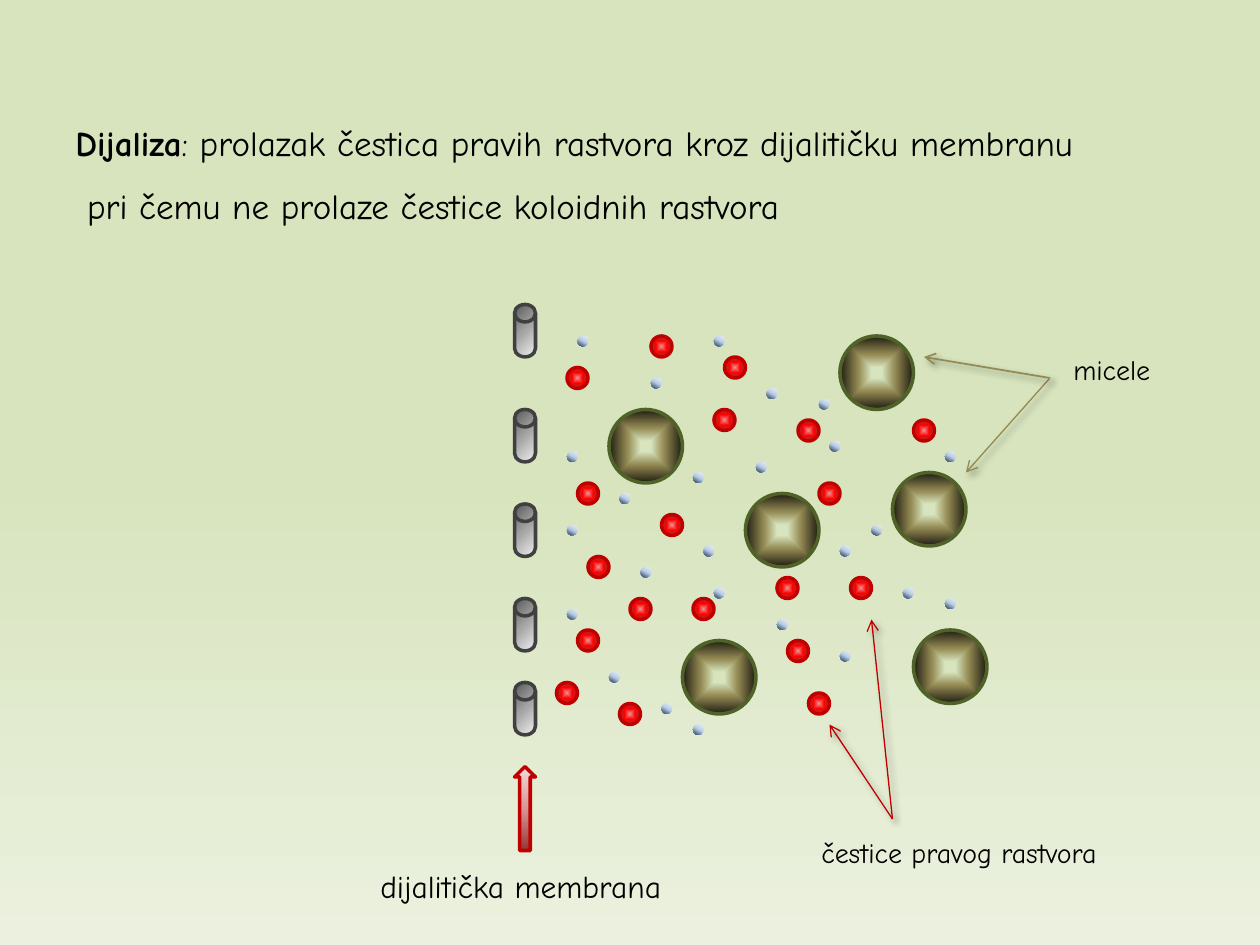
from lxml import etree
from pptx import Presentation
from pptx import util as u
from pptx.dml.color import RGBColor
from pptx.enum import shapes, text
from pptx.oxml import parse_xml
from pptx.oxml.ns import nsdecls, qn

COLORS = {
    "ink": "000000", "steel": "404040", "moss": "4F6228",
    "olive": "948A54", "red": "C00000",
}
GRADIENTS = {
    "sky": [(0, "EBF1DE"), (50, "D7E4BD"), (100, "D7E4BD")],
    "membrane": [(0, "F2F2F2"), (50, "A6A6A6"), (100, "595959")],
    "micelle": [(14, "D7E4BD"), (50, "948A54"), (100, "1E1C11")],
    "particle": [(0, "EB9393"), (50, "FF0000"), (100, "953735")],
    "arrow": [(0, "F2DCDB"), (50, "D99694"), (100, "953735")],
    "solvent": [(14, "DCE6F2"), (50, "B9CDE5"), (100, "254061")],
}
CENTER = (50, 50, 50, 50)
CORNER = (100, 100, 0, 0)

PORES = [29, 39, 48, 57, 65]
MICELLES = [(71, 47), (85, 45), (87, 60), (65, 61), (58, 39), (80, 32)]
PARTICLES = [
    (56, 53), (68, 39), (60, 57), (62, 32), (53, 65), (74, 55), (66, 57),
    (77, 66), (76, 40), (81, 55), (63, 49), (55, 46), (87, 40), (59, 67),
    (69, 34), (78, 46), (75, 61), (54, 35), (55, 60),
]
SOLVENT = [
    (72, 44), (73, 37), (62, 36), (66, 45), (61, 54), (67, 52), (79, 42),
    (78, 38), (80, 52), (86, 56), (54, 50), (54, 43), (55, 32), (68, 32),
    (74, 59), (68, 56), (58, 64), (54, 58), (59, 47), (90, 43), (83, 50),
    (80, 62), (63, 67), (66, 69), (90, 57),
]


def grid(n):
    return u.Inches(n / 12)


def add_run(p, content, size=16, bold=False, color="ink", font="Comic Neue"):
    r = p.add_run()
    r.text = content
    r.font.name = font
    r.font.size = u.Pt(size)
    r.font.bold = bold
    r.font.color.rgb = RGBColor.from_string(COLORS[color])
    return r


class Deck:
    def __init__(self):
        self.prs = Presentation()
        self.prs.slide_width = u.Inches(10)
        self.prs.slide_height = u.Inches(7.5)
        self.s = self.prs.slides.add_slide(self.prs.slide_layouts[6])

    def gradient(self, owner, fill, name, angle=None, path="shape", center=CENTER):
        fill.gradient()
        old = owner._element.find(".//" + qn("a:gradFill"))
        stops = "".join(
            f'<a:gs pos="{pos * 1000}"><a:srgbClr val="{color}"/></a:gs>'
            for pos, color in GRADIENTS[name]
        )
        if angle is None:
            sides = " ".join(f'{k}="{v * 1000}"' for k, v in zip("ltrb", center))
            way = f'<a:path path="{path}"><a:fillToRect {sides}/></a:path>'
        else:
            way = f'<a:lin ang="{angle * 60000}" scaled="0"/>'
        new = parse_xml(
            f'<a:gradFill {nsdecls("a")} rotWithShape="1">'
            f"<a:gsLst>{stops}</a:gsLst>{way}</a:gradFill>"
        )
        old.getparent().replace(old, new)

    def background(self, name, angle):
        self.gradient(self.s, self.s.background.fill, name, angle)

    def shape(self, kind, x, y, w, h, name, line=None, **way):
        sp = self.s.shapes.add_shape(kind, grid(x), grid(y), grid(w), grid(h))
        sp.shadow.inherit = False
        self.gradient(sp, sp.fill, name, **way)
        if line:
            sp.line.color.rgb = RGBColor.from_string(COLORS[line])
            sp.line.width = u.Pt(2)
        else:
            sp.line.fill.background()
        return sp

    def textbox(self, x, y, w, h, paragraphs, spacing=None):
        sp = self.s.shapes.add_textbox(*map(u.Inches, (x, y, w, h)))
        tf = sp.text_frame
        tf.word_wrap = False
        tf.auto_size = text.MSO_AUTO_SIZE.SHAPE_TO_FIT_TEXT
        for i, runs in enumerate(paragraphs):
            p = tf.add_paragraph() if i else tf.paragraphs[0]
            p.line_spacing = spacing
            for content, style in runs:
                add_run(p, content, **style)

    def pointer(self, start, end, color, width=0.75):
        c = self.s.shapes.add_connector(
            shapes.MSO_CONNECTOR.STRAIGHT, *map(grid, (*start, *end))
        )
        c.line.color.rgb = RGBColor.from_string(COLORS[color])
        c.line.width = u.Pt(width)
        etree.SubElement(c.line._ln, qn("a:tailEnd"), type="arrow")
        c._element.spPr.append(parse_xml(
            f'<a:effectLst {nsdecls("a")}>'
            f'<a:outerShdw blurRad="{u.Pt(4)}" dist="{u.Pt(3)}" dir="2700000" rotWithShape="0">'
            f'<a:srgbClr val="{COLORS["ink"]}"><a:alpha val="40000"/></a:srgbClr>'
            "</a:outerShdw></a:effectLst>"
        ))


def main():
    d = Deck()
    kind = shapes.MSO_SHAPE
    d.background("sky", 270)

    big = {"size": 20}
    d.textbox(0.5, 0.75, 9.1, 1.11, [
        [("Dijaliza", {"size": 20, "bold": True}),
         (": prolazak čestica pravih rastvora kroz dijalitičku membranu", big)],
        [(" pri čemu ne prolaze čestice koloidnih rastvora", big)],
    ], spacing=1.5)

    for y in PORES:
        d.shape(kind.FLOWCHART_MAGNETIC_DISK, 49, y, 2, 5, "membrane", "steel",
                path="circle", center=CORNER)
    d.textbox(2.92, 6.83, 2.67, 0.4, [[("dijalitička membrana", {"size": 18})]])

    for x, y in MICELLES:
        d.shape(kind.OVAL, x, y, 7, 7, "micelle", "moss")
    for x, y in PARTICLES:
        d.shape(kind.OVAL, x, y, 2, 2, "particle", "red")
    d.shape(kind.UP_ARROW, 49, 73, 2, 8, "arrow", "red", angle=90)
    for x, y in SOLVENT:
        d.shape(kind.TEAR, x, y, 1, 1, "solvent", angle=120)

    d.pointer((100, 36), (92, 45), "olive")
    d.pointer((100, 36), (88, 34), "olive", width=1)
    d.textbox(8.42, 2.75, 0.86, 0.37, [[("micele", {})]])

    for tip in [(79, 69), (83, 59)]:
        d.pointer((85, 78), tip, "red")
    d.textbox(6.42, 6.58, 2.69, 0.37, [[("čestice pravog rastvora", {})]])

    d.prs.save("out.pptx")


if __name__ == "__main__":
    main()
